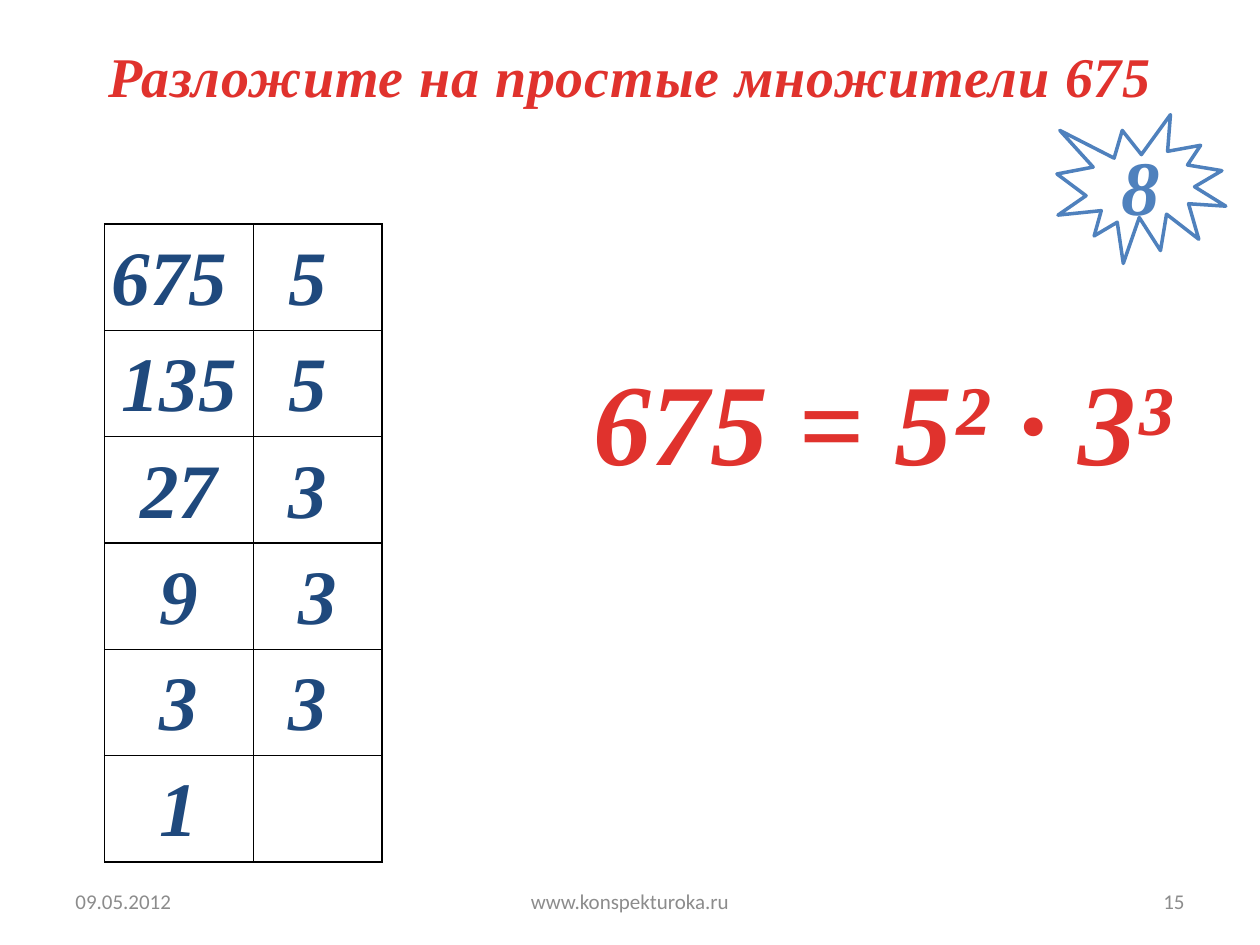
"""Build a slide that factors 675 into primes."""
from lxml import etree
from pptx import Presentation
from pptx.dml.color import RGBColor
from pptx.enum.shapes import MSO_SHAPE
from pptx.enum.text import MSO_ANCHOR, PP_ALIGN
from pptx.oxml.ns import qn
from pptx.util import Pt

LEFT, CENTER, RIGHT = PP_ALIGN.LEFT, PP_ALIGN.CENTER, PP_ALIGN.RIGHT
TOP, MIDDLE = MSO_ANCHOR.TOP, MSO_ANCHOR.MIDDLE
SEAL = MSO_SHAPE.EXPLOSION1
COLORS = {
    "red": "E0322D",
    "navy": "1F497D",
    "blue": "4F81BD",
    "gray": "8C8C8C",
    "white": "FFFFFF",
    "black": "000000",
}


def write(frame, text, size=44, color="navy", font="Times New Roman",
          bold=True, align=CENTER, spacing=None, tracking=None):
    paragraph = frame.paragraphs[0]
    paragraph.alignment = align
    paragraph.line_spacing = spacing
    run = paragraph.add_run()
    run.text = text
    run.font.name = font
    run.font.size = Pt(size)
    run.font.bold = run.font.italic = bold
    run.font.color.rgb = RGBColor.from_string(COLORS[color])
    if tracking:
        run.font._element.set("spc", str(tracking))


def add_borders(cell):
    properties = cell._tc.get_or_add_tcPr()
    for index, side in enumerate(("lnL", "lnR", "lnT", "lnB")):
        line = etree.Element(qn(f"a:{side}"), w=str(Pt(1)))
        fill = etree.SubElement(line, qn("a:solidFill"))
        etree.SubElement(fill, qn("a:srgbClr"), val=COLORS["black"])
        properties.insert(index, line)


presentation = Presentation()
presentation.slide_width, presentation.slide_height = Pt(720), Pt(540)
slide = presentation.slides.add_slide(presentation.slide_layouts[6])

footer = {"size": 12, "color": "gray", "font": "Calibri", "bold": False}
heading = {"color": "red", "tracking": 50}
text_boxes = [
    ("09.05.2012", (36, 500.5, 168, 28.75), MIDDLE, True, {**footer, "align": LEFT}),
    ("www.konspekturoka.ru", (246, 500.5, 228, 28.75), MIDDLE, True, footer),
    ("15", (516, 500.5, 168, 28.75), MIDDLE, True, {**footer, "align": RIGHT}),
    ("Разложите на простые множители 675", (54, 20.25, 612.5, 46), TOP, True,
     {**heading, "size": 32}),
    ("675 = 5² ∙ 3³", (332, 196.5, 349, 87), TOP, False,
     {**heading, "size": 66, "align": LEFT}),
]
for text, box, anchor, wrap, style in text_boxes:
    frame = slide.shapes.add_textbox(*map(Pt, box)).text_frame
    frame.word_wrap = wrap
    frame.vertical_anchor = anchor
    write(frame, text, **style)

factors = [("675 ", "5 "), ("135", "5 "), ("27", "3 "), ("9", "3"), ("3", "3 "), ("1", "")]
column_widths = (85, 73.5)
row_height = 60.75
table = slide.shapes.add_table(
    len(factors), len(column_widths), Pt(59.75), Pt(128),
    Pt(sum(column_widths)), Pt(row_height * len(factors))).table
table.first_row = table.horz_banding = False
for column, width in zip(table.columns, column_widths):
    column.width = Pt(width)
for row, values in zip(table.rows, factors):
    row.height = Pt(row_height)
    for cell, value in zip(row.cells, values):
        cell.margin_left = cell.margin_right = Pt(2)
        cell.margin_top = cell.margin_bottom = 0
        cell.fill.background()
        add_borders(cell)
        if value:
            write(cell.text_frame, value, spacing=1.15)

badge = slide.shapes.add_shape(SEAL, Pt(604), Pt(65.5), Pt(96.5), Pt(85))
badge.shadow.inherit = False
badge.fill.solid()
badge.fill.fore_color.rgb = RGBColor.from_string(COLORS["white"])
badge.line.color.rgb = RGBColor.from_string(COLORS["blue"])
badge.line.width = Pt(2)
badge.text_frame.vertical_anchor = MIDDLE
write(badge.text_frame, "8", color="blue")

presentation.save("out.pptx")
